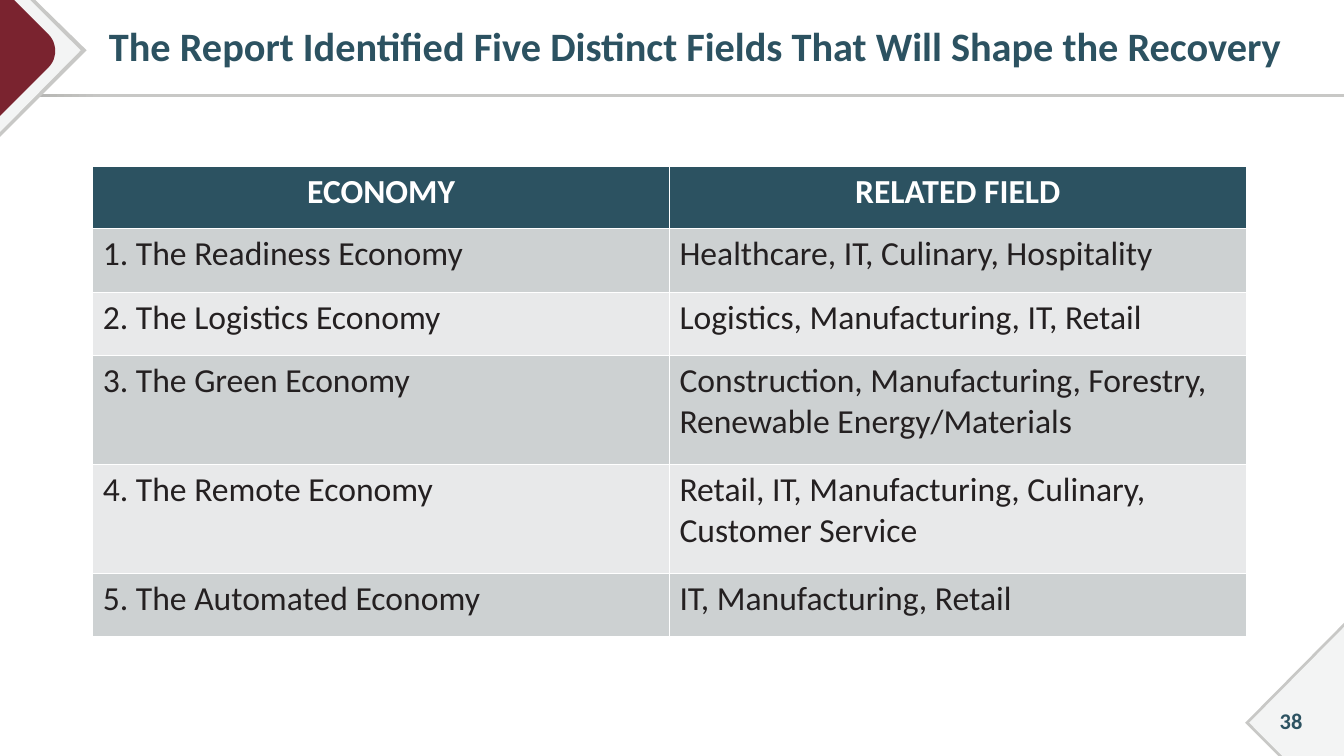
from pptx import Presentation
from pptx.dml.color import RGBColor
from pptx.enum.text import MSO_ANCHOR, PP_ALIGN
from pptx.enum.shapes import MSO_SHAPE
from pptx.util import Inches, Pt

COLORS = {
    "teal": "2C5261", "maroon": "7A232F", "edge": "C8C8C6", "edge_dark": "ABABA8",
    "pale": "F3F4F4", "ink": "242021", "white": "FFFFFF",
    "band_dark": "CDD1D2", "band_light": "E8E9EA",
}


def rgb(name):
    return RGBColor.from_string(COLORS[name])


def style_text(paragraph, size, color, bold, align):
    paragraph.alignment = align
    for run in paragraph.runs:
        run.font.name = "Calibri"
        run.font.size = Pt(size)
        run.font.bold = bold
        run.font.color.rgb = rgb(color)


prs = Presentation()
prs.slide_width, prs.slide_height = Inches(13.33), Inches(7.5)
slide = prs.slides.add_slide(prs.slide_layouts[5])
shapes = slide.shapes

title_rule = shapes.add_shape(
    MSO_SHAPE.RECTANGLE, 0, Inches(0.93), prs.slide_width, Inches(0.03))
title_rule.shadow.inherit = False
title_rule.line.fill.background()
title_rule.fill.gradient()
title_rule.fill.gradient_angle = 0
for stop, position, color in zip(
        title_rule.fill.gradient_stops, (0, 0.08), ("edge_dark", "edge")):
    stop.position = position
    stop.color.rgb = rgb(color)

bend = [(0.48, 0.34), (0.57, 0.43), (0.57, 0.58), (0.48, 0.67)]
rounded_tip = []
for step in range(13):
    t = step / 12
    weights = ((1 - t) ** 3, 3 * t * (1 - t) ** 2, 3 * t ** 2 * (1 - t), t ** 3)
    rounded_tip.append(tuple(
        sum(w * point[axis] for w, point in zip(weights, bend)) for axis in (0, 1)))

corners = [
    ("edge", [(0, 0), (0.35, 0), (0.86, 0.5), (0, 1.36)]),
    ("pale", [(0, 0), (0.3, 0), (0.8, 0.5), (0, 1.31)]),
    ("maroon", [(0, 0), (0.14, 0), *rounded_tip, (0, 1.15)]),
    ("edge", [(13.33, 6.18), (13.33, 7.5), (12.68, 7.5), (12.35, 7.17)]),
    ("pale", [(13.33, 6.22), (13.33, 7.5), (12.72, 7.5), (12.39, 7.17)]),
]
for color, outline in corners:
    points = [(Inches(x), Inches(y)) for x, y in outline]
    builder = shapes.build_freeform(*points[0])
    builder.add_line_segments(points[1:], close=True)
    corner = builder.convert_to_shape()
    corner.shadow.inherit = False
    corner.fill.solid()
    corner.fill.fore_color.rgb = rgb(color)
    corner.line.fill.background()

page_number = shapes.add_textbox(Inches(12.45), Inches(6.95), Inches(0.71), Inches(0.4))
page_number.text_frame.word_wrap = True
page_number.text_frame.vertical_anchor = MSO_ANCHOR.MIDDLE
page_number.text_frame.text = "38"
style_text(page_number.text_frame.paragraphs[0], 16, "teal", True, PP_ALIGN.CENTER)

title = shapes.title
title.left, title.top = Inches(0.88), Inches(0.05)
title.width, title.height = Inches(12.12), Inches(0.86)
heading = title.text_frame
heading.text = "The Report Identified Five Distinct Fields That Will Shape the Recovery"
heading.word_wrap = True
heading.vertical_anchor = MSO_ANCHOR.MIDDLE
heading.margin_left, heading.margin_right = Inches(0.2), Inches(0.1)
heading.margin_top = heading.margin_bottom = Inches(0.05)
heading.paragraphs[0].line_spacing = 0.9
style_text(heading.paragraphs[0], 28.8, "teal", True, PP_ALIGN.LEFT)

rows = [
    (0.62, "ECONOMY", "RELATED FIELD"),
    (0.63, "1. The Readiness Economy", "Healthcare, IT, Culinary, Hospitality"),
    (0.63, "2. The Logistics Economy", "Logistics, Manufacturing, IT, Retail"),
    (1.08, "3. The Green Economy",
     "Construction, Manufacturing, Forestry, Renewable Energy/Materials"),
    (1.08, "4. The Remote Economy", "Retail, IT, Manufacturing, Culinary, Customer Service"),
    (0.63, "5. The Automated Economy", "IT, Manufacturing, Retail"),
]
economies = shapes.add_table(
    len(rows), 2, Inches(0.92), Inches(1.65), Inches(11.44), Inches(4.67)).table
for r, (height, *texts) in enumerate(rows):
    economies.rows[r].height = Inches(height)
    if r == 0:
        fill, text_style = "teal", (24, "white", True, PP_ALIGN.CENTER)
    else:
        fill = "band_dark" if r % 2 else "band_light"
        text_style = (24, "ink", False, PP_ALIGN.LEFT)
    for c, text in enumerate(texts):
        cell = economies.cell(r, c)
        cell.fill.solid()
        cell.fill.fore_color.rgb = rgb(fill)
        cell.text_frame.text = text
        style_text(cell.text_frame.paragraphs[0], *text_style)

prs.save("out.pptx")
